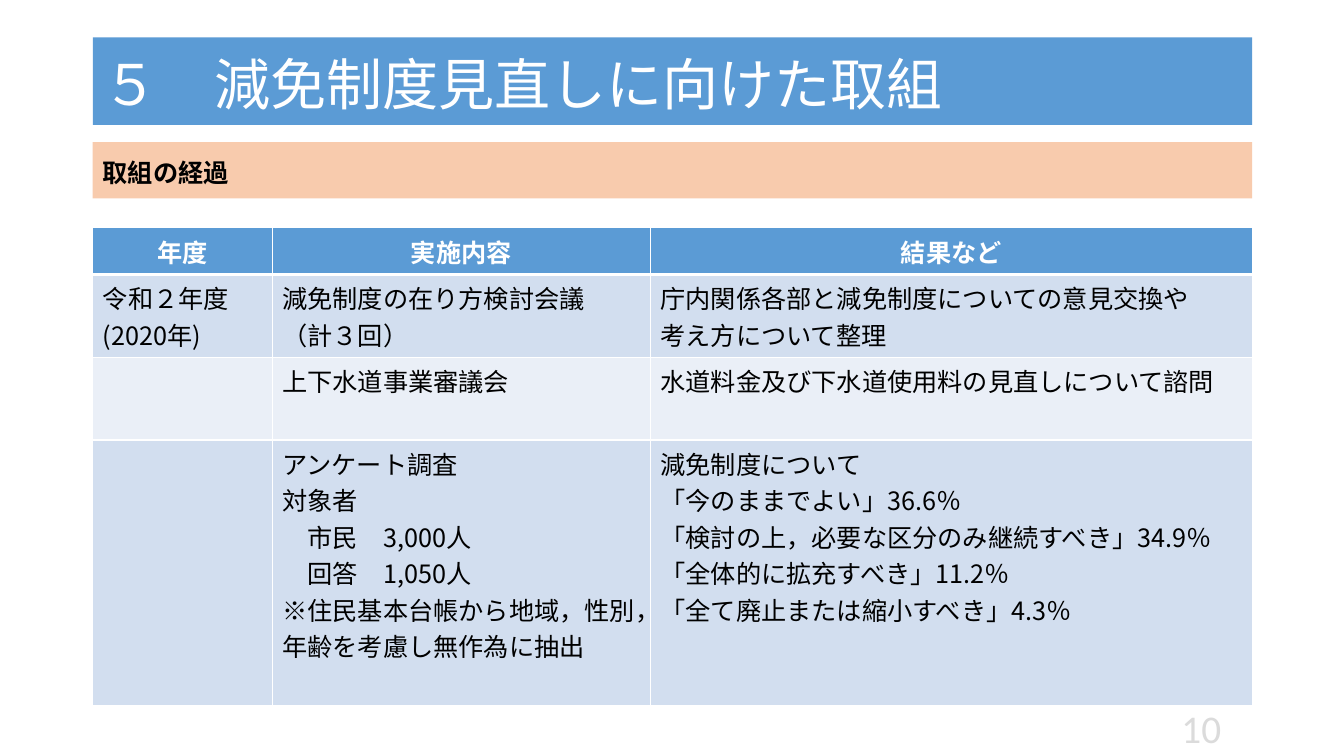
from lxml import etree
from pptx import Presentation
from pptx.dml.color import RGBColor
from pptx.enum.shapes import MSO_SHAPE
from pptx.enum.text import MSO_ANCHOR, MSO_AUTO_SIZE, PP_ALIGN
from pptx.oxml.ns import qn
from pptx.util import Emu, Pt

RECTANGLE = MSO_SHAPE.RECTANGLE
TOP, MIDDLE = MSO_ANCHOR.TOP, MSO_ANCHOR.MIDDLE
LEFT, CENTER, RIGHT = PP_ALIGN.LEFT, PP_ALIGN.CENTER, PP_ALIGN.RIGHT
NO_AUTOFIT = MSO_AUTO_SIZE.NONE

WHITE = RGBColor(0xFF, 0xFF, 0xFF)
BLACK = RGBColor(0x00, 0x00, 0x00)
BLUE = RGBColor(0x5B, 0x9B, 0xD5)
PEACH = RGBColor(0xF8, 0xCB, 0xAD)
BAND_DARK = RGBColor(0xD2, 0xDE, 0xEF)
BAND_LIGHT = RGBColor(0xEA, 0xEF, 0xF7)
PALE_GRAY = RGBColor(0xDB, 0xDB, 0xDB)

EMU_PER_PX = 9144  # 100 px to the inch
MARGIN, CONTENT_WIDTH = 92, 1150
COLUMN_WIDTHS = [178, 375, 597]
ROW_HEIGHTS = [45, 82, 82, 263]

PROGRESS = [
    ["年度", "実施内容", "結果など"],
    ["令和２年度\n(2020年)",
     "減免制度の在り方検討会議\n（計３回）",
     "庁内関係各部と減免制度についての意見交換や\n考え方について整理"],
    ["", "上下水道事業審議会", "水道料金及び下水道使用料の見直しについて諮問"],
    ["",
     "アンケート調査\n対象者\n　市民　3,000人\n　回答　1,050人\n"
     "※住民基本台帳から地域，性別，年齢を考慮し無作為に抽出",
     "減免制度について\n「今のままでよい」36.6％\n"
     "「検討の上，必要な区分のみ継続すべき」34.9％\n"
     "「全体的に拡充すべき」11.2％\n「全て廃止または縮小すべき」4.3％"],
]


def px(length):
    return Emu(length * EMU_PER_PX)


class SlideBuilder:
    font = "Noto Sans CJK JP"
    text_size = 18

    def __init__(self, slide):
        self.slide = slide

    def set_text(self, frame, text, color, size=text_size, bold=False, align=LEFT, font=font):
        frame.text = text
        frame.word_wrap = True
        for paragraph in frame.paragraphs:
            paragraph.alignment = align
            for run in paragraph.runs:
                run.font.name = font
                run.font.size = Pt(size)
                run.font.bold = bold
                run.font.color.rgb = color
                east_asian = etree.Element(qn("a:ea"), typeface=font)
                run.font._element.find(qn("a:latin")).addnext(east_asian)

    def inset(self, frame, top):
        frame.auto_size = NO_AUTOFIT
        frame.vertical_anchor = MIDDLE
        frame.margin_left = frame.margin_right = px(10)
        frame.margin_top, frame.margin_bottom = px(top), px(4)

    def title(self, text, left, top, width, height):
        title = self.slide.shapes.title
        title.left, title.top = px(left), px(top)
        title.width, title.height = px(width), px(height)
        title.fill.solid()
        title.fill.fore_color.rgb = BLUE
        self.inset(title.text_frame, 17)
        self.set_text(title.text_frame, text, WHITE, size=40)
        title.text_frame.paragraphs[0].line_spacing = 0.9

    def band(self, text, left, top, width, height):
        band = self.slide.shapes.add_shape(
            RECTANGLE, px(left), px(top), px(width), px(height))
        band.shadow.inherit = False
        band.fill.solid()
        band.fill.fore_color.rgb = PEACH
        band.line.fill.background()
        self.inset(band.text_frame, 8)
        self.set_text(band.text_frame, text, BLACK, bold=True)

    def borders(self, cell, widths):
        properties = cell._tc.get_or_add_tcPr()
        for position, (side, width) in enumerate(widths.items()):
            line = etree.Element(qn(f"a:ln{side}"), w=str(Pt(width)))
            fill = etree.SubElement(line, qn("a:solidFill"))
            etree.SubElement(fill, qn("a:srgbClr"), val=str(WHITE))
            properties.insert(position, line)

    def table(self, rows, left, top, column_widths, row_heights):
        table = self.slide.shapes.add_table(
            len(rows), len(column_widths), px(left), px(top),
            px(sum(column_widths)), px(sum(row_heights))).table
        for column, width in zip(table.columns, column_widths):
            column.width = px(width)
        for r, texts in enumerate(rows):
            table.rows[r].height = px(row_heights[r])
            header = r == 0
            band_fill = BAND_DARK if r % 2 else BAND_LIGHT
            for c, text in enumerate(texts):
                cell = table.cell(r, c)
                cell.fill.solid()
                cell.fill.fore_color.rgb = BLUE if header else band_fill
                cell.vertical_anchor = MIDDLE if (r, c) == (1, 0) else TOP
                self.set_text(cell.text_frame, text, WHITE if header else BLACK,
                              bold=header, align=CENTER if header else LEFT)
                self.borders(cell, {"L": 1, "R": 1, "T": 3 if r == 1 else 1,
                                    "B": 3 if header else 1})

    def page_number(self, text, left, top, width, height):
        number = self.slide.shapes.add_textbox(px(left), px(top), px(width), px(height))
        number.text_frame.vertical_anchor = MIDDLE
        self.set_text(number.text_frame, text, PALE_GRAY, size=28, align=RIGHT, font="Calibri")


def main():
    presentation = Presentation()
    presentation.slide_width, presentation.slide_height = px(1333), px(750)
    title_only = presentation.slide_layouts[5]
    builder = SlideBuilder(presentation.slides.add_slide(title_only))

    # Headings
    builder.title("５　減免制度見直しに向けた取組", MARGIN, 37, CONTENT_WIDTH, 87)
    builder.band("取組の経過", MARGIN, 141, CONTENT_WIDTH, 56)

    # Progress by fiscal year
    builder.table(PROGRESS, MARGIN, 226, COLUMN_WIDTHS, ROW_HEIGHTS)

    # Footer
    builder.page_number("10", 921, 702, 300, 40)

    presentation.save("out.pptx")


if __name__ == "__main__":
    main()
